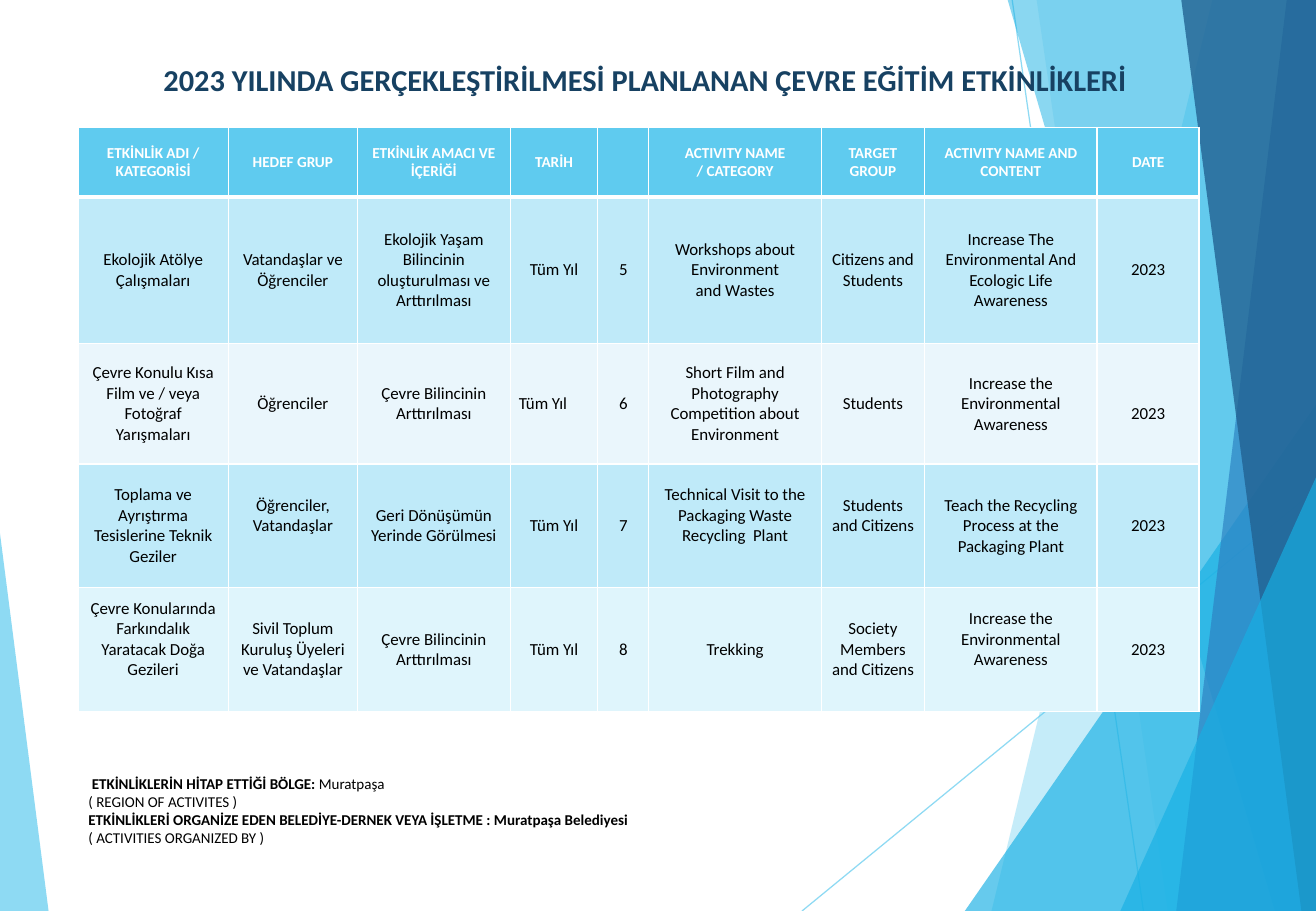
import lxml.etree
import pptx
import pptx.dml.color
import pptx.enum.shapes
import pptx.enum.text
import pptx.oxml.ns
import pptx.util

PX = 9144
FONT = "Calibri"
COLORS = {
    "sky": "5FCBEF", "cyan": "17B0E4", "blue": "2E83C3", "navy": "226292",
    "title": "174162", "white": "FFFFFF", "black": "000000",
    "band": "BFEAF9", "pale": "EAF6FC", "mist": "DFF5FC",
}
COLUMN_WIDTHS = [124, 106, 126, 72, 42, 142, 85, 142, 84]
ROW_HEIGHTS = [57, 121, 99, 102, 102]
ROW_FILLS = ["sky", "band", "pale", "band", "mist"]
ACTIVITIES = [
    ["ETKİNLİK ADI / KATEGORİSİ", "HEDEF GRUP", "ETKİNLİK AMACI VE İÇERİĞİ", "TARİH", "",
     "ACTIVITY NAME\n/ CATEGORY", "TARGET GROUP", "ACTIVITY NAME AND CONTENT", "DATE"],
    ["Ekolojik Atölye Çalışmaları", "Vatandaşlar ve Öğrenciler",
     "Ekolojik Yaşam Bilincinin oluşturulması ve Arttırılması", "Tüm Yıl", "5",
     "Workshops about Environment\nand Wastes", "Citizens and Students",
     "Increase The Environmental And Ecologic Life Awareness", "2023"],
    ["Çevre Konulu Kısa Film ve / veya Fotoğraf Yarışmaları", "Öğrenciler",
     "Çevre Bilincinin Arttırılması", "Tüm Yıl", "6",
     "Short Film and Photography Competition about Environment", "Students",
     "Increase the Environmental Awareness", "2023"],
    ["Toplama ve Ayrıştırma Tesislerine Teknik Geziler", "Öğrenciler, Vatandaşlar",
     "Geri Dönüşümün Yerinde Görülmesi", "Tüm Yıl", "7",
     "Technical Visit to the Packaging Waste Recycling  Plant", "Students and Citizens",
     "Teach the Recycling Process at the Packaging Plant", "2023"],
    ["Çevre Konularında Farkındalık Yaratacak Doğa Gezileri",
     "Sivil Toplum Kuruluş Üyeleri ve Vatandaşlar",
     "Çevre Bilincinin Arttırılması", "Tüm Yıl", "8", "Trekking",
     "Society Members and Citizens", "Increase the Environmental Awareness", "2023"],
]
RAISED_CELLS = {(3, 1), (3, 5), (3, 6), (4, 0), (4, 7)}
LOWERED_CELLS = {(2, 8)}
LEFT_CELLS = {(2, 3)}
ORGANIZER_LINES = [
    [(" ETKİNLİKLERİN HİTAP ETTİĞİ BÖLGE: ", True), ("Muratpaşa", False)],
    [("( REGION OF ACTIVITES )", False)],
    [("ETKİNLİKLERİ ORGANİZE EDEN BELEDİYE-DERNEK VEYA İŞLETME : Muratpaşa Belediyesi", True)],
    [("( ACTIVITIES ORGANIZED BY )", False)],
]


def rgb(name):
    """Return the named colour."""
    return pptx.dml.color.RGBColor.from_string(COLORS[name])


def to_emu(lengths):
    """Turn px lengths into EMU."""
    return [length * PX for length in lengths]


def format_span(span, size, color, bold):
    """Set the font of one run."""
    span.font.name = FONT
    span.font.size = pptx.util.Pt(size)
    span.font.color.rgb = rgb(color)
    span.font.bold = bold


def set_opacity(shape, percent):
    """Make the colours of a shape translucent."""
    for color in shape.element.iter(pptx.oxml.ns.qn("a:srgbClr")):
        alpha = lxml.etree.SubElement(color, pptx.oxml.ns.qn("a:alpha"))
        alpha.set("val", str(percent * 1000))


def paint(shape, color, opacity):
    """Give a shape a flat translucent fill."""
    shape.shadow.inherit = False
    shape.fill.solid()
    shape.fill.fore_color.rgb = rgb(color)
    shape.line.fill.background()
    set_opacity(shape, opacity)


def add_ray(page, box, start, end):
    """Draw one thin line of the backdrop."""
    left, top = box[:2]
    ends = to_emu([left + start[0], top + start[1], left + end[0], top + end[1]])
    ray = page.shapes.add_connector(pptx.enum.shapes.MSO_CONNECTOR.STRAIGHT, *ends)
    ray.line.color.rgb = rgb("sky")
    ray.line.width = pptx.util.Pt(0.75)
    lxml.etree.SubElement(ray.element.spPr, pptx.oxml.ns.qn("a:effectLst"))
    set_opacity(ray, 70)


def add_panel(page, box, top_x, bottom_x, color, opacity):
    """Draw a panel from a slanted edge to the right side of the box."""
    left, top, width, height = box
    builder = page.shapes.build_freeform(top_x, -1, scale=PX)
    builder.add_line_segments([(width, -1), (width, height), (bottom_x, height)], close=True)
    paint(builder.convert_to_shape(left * PX, top * PX), color, opacity)


def add_triangle(page, box, place, apex, color, opacity):
    """Draw a right triangle with its apex at one side."""
    left, top, width, height = place
    triangle = page.shapes.add_shape(
        pptx.enum.shapes.MSO_SHAPE.ISOSCELES_TRIANGLE,
        *to_emu([box[0] + left, box[1] + top, width, height]))
    triangle.adjustments[0] = apex
    paint(triangle, color, opacity)


def add_backdrop(page, box):
    """Place the faceted blue backdrop."""
    add_ray(page, box, (833, 0), (941, 750))
    add_ray(page, box, (1083, 403), (660, 750))
    add_panel(page, box, 998, 816, "sky", 36)
    add_panel(page, box, 853, 961, "sky", 20)
    add_triangle(page, box, (794, 333, 289, 417), 1, "cyan", 66)
    add_panel(page, box, 829, 1049, "cyan", 50)
    add_panel(page, box, 1059, 968, "blue", 70)
    add_panel(page, box, 972, 1071, "navy", 80)
    add_triangle(page, box, (922, 393, 161, 357), 1, "cyan", 66)
    add_triangle(page, box, (0, 439, 40, 311), 0, "sky", 70)


def add_heading(page, box):
    """Place the title above the backdrop."""
    title = page.shapes.title
    title.element.getparent().append(title.element)
    title.left, title.top, title.width, title.height = to_emu(box)
    frame = title.text_frame
    frame.text = "2023 YILINDA GERÇEKLEŞTİRİLMESİ PLANLANAN ÇEVRE EĞİTİM ETKİNLİKLERİ"
    frame.vertical_anchor = pptx.enum.text.MSO_ANCHOR.MIDDLE
    para = frame.paragraphs[0]
    para.alignment = pptx.enum.text.PP_ALIGN.CENTER
    format_span(para.runs[0], 18, "title", True)


def add_borders(properties, row):
    """Draw white cell borders, thicker between header and body."""
    widths = {"a:lnL": 1, "a:lnR": 1, "a:lnT": 3 if row == 1 else 1, "a:lnB": 3 if row == 0 else 1}
    for tag, width in widths.items():
        border = lxml.etree.SubElement(properties, pptx.oxml.ns.qn(tag))
        border.set("w", str(pptx.util.Pt(width)))
        fill = lxml.etree.SubElement(border, pptx.oxml.ns.qn("a:solidFill"))
        color = lxml.etree.SubElement(fill, pptx.oxml.ns.qn("a:srgbClr"))
        color.set("val", COLORS["white"])


def fill_cell(cell, row, column):
    """Write and format one cell of the activity table."""
    spot = (row, column)
    cell.fill.solid()
    cell.fill.fore_color.rgb = rgb(ROW_FILLS[row])
    cell.vertical_anchor = pptx.enum.text.MSO_ANCHOR.MIDDLE
    cell.margin_left = cell.margin_right = 7 * PX
    cell.margin_top = (21 if spot in LOWERED_CELLS else 4) * PX
    cell.margin_bottom = (21 if spot in RAISED_CELLS else 4) * PX
    cell.text_frame.text = ACTIVITIES[row][column]
    align = pptx.enum.text.PP_ALIGN
    header = row == 0
    for para in cell.text_frame.paragraphs:
        para.alignment = align.LEFT if spot in LEFT_CELLS else align.CENTER
        for span in para.runs:
            format_span(span, 9 if header else 10, "white" if header else "black", header)


def add_activity_table(page, box):
    """Place the table of activities in two languages."""
    holder = page.shapes.add_table(len(ROW_HEIGHTS), len(COLUMN_WIDTHS), *to_emu(box))
    table = holder.table
    for column, width in zip(table.columns, COLUMN_WIDTHS):
        column.width = width * PX
    for row, height in zip(table.rows, ROW_HEIGHTS):
        row.height = height * PX
    elements = holder.element.iter(pptx.oxml.ns.qn("a:tc"))
    for index, (cell, element) in enumerate(zip(table.iter_cells(), elements)):
        row, column = divmod(index, len(COLUMN_WIDTHS))
        add_borders(element.get_or_add_tcPr(), row)
        fill_cell(cell, row, column)


def add_organizer_note(page, box):
    """Place the note on region and organizer."""
    frame = page.shapes.add_textbox(*to_emu(box)).text_frame
    frame.word_wrap = True
    for index, line in enumerate(ORGANIZER_LINES):
        para = frame.add_paragraph() if index else frame.paragraphs[0]
        for text, bold in line:
            span = para.add_run()
            span.text = text
            format_span(span, 8.9, "black", bold)


def main():
    """Build the deck and save it."""
    deck = pptx.Presentation()
    deck.slide_width, deck.slide_height = to_emu([1083, 750])
    page = deck.slides.add_slide(deck.slide_layouts.get_by_name("Title Only"))
    add_backdrop(page, (0, 0, 1083, 750))
    add_heading(page, (114, 46, 834, 39))
    add_activity_table(page, (64, 105, sum(COLUMN_WIDTHS), sum(ROW_HEIGHTS)))
    add_organizer_note(page, (63, 633, 793, 70))
    deck.save("out.pptx")


if __name__ == "__main__":
    main()
